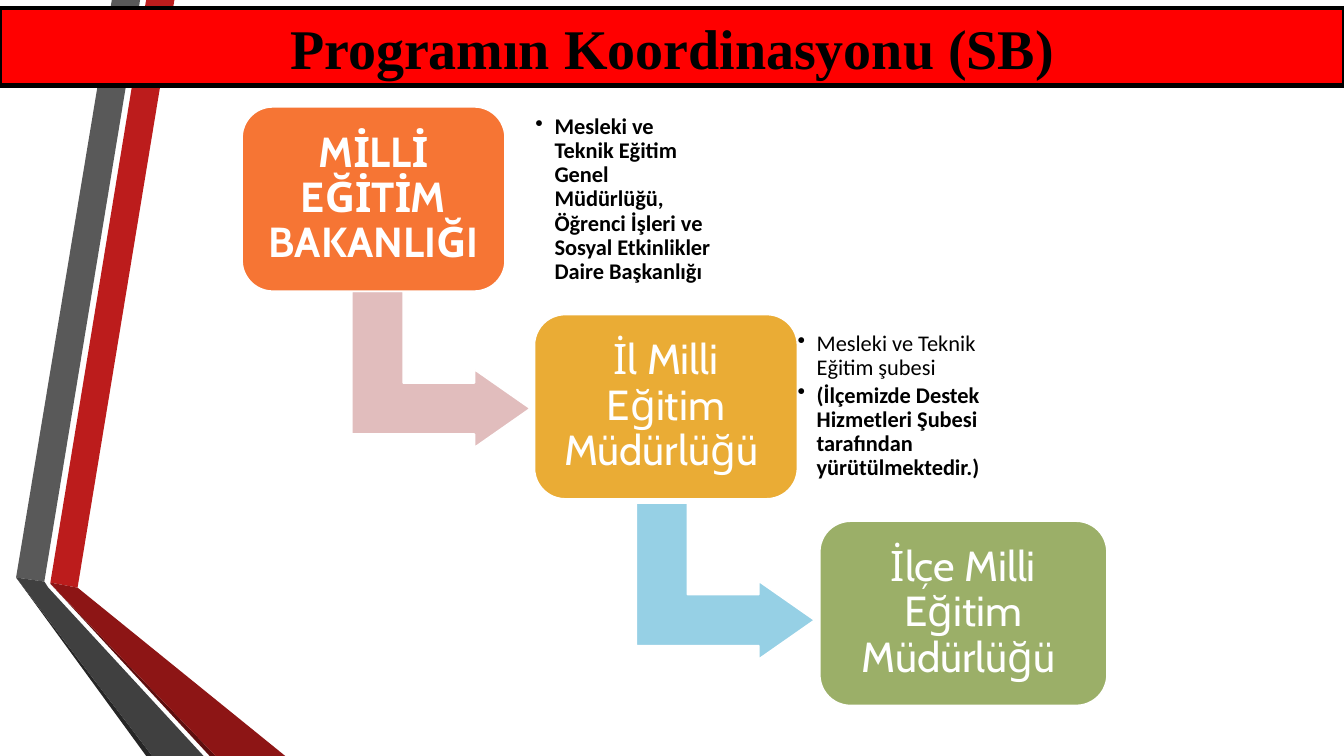
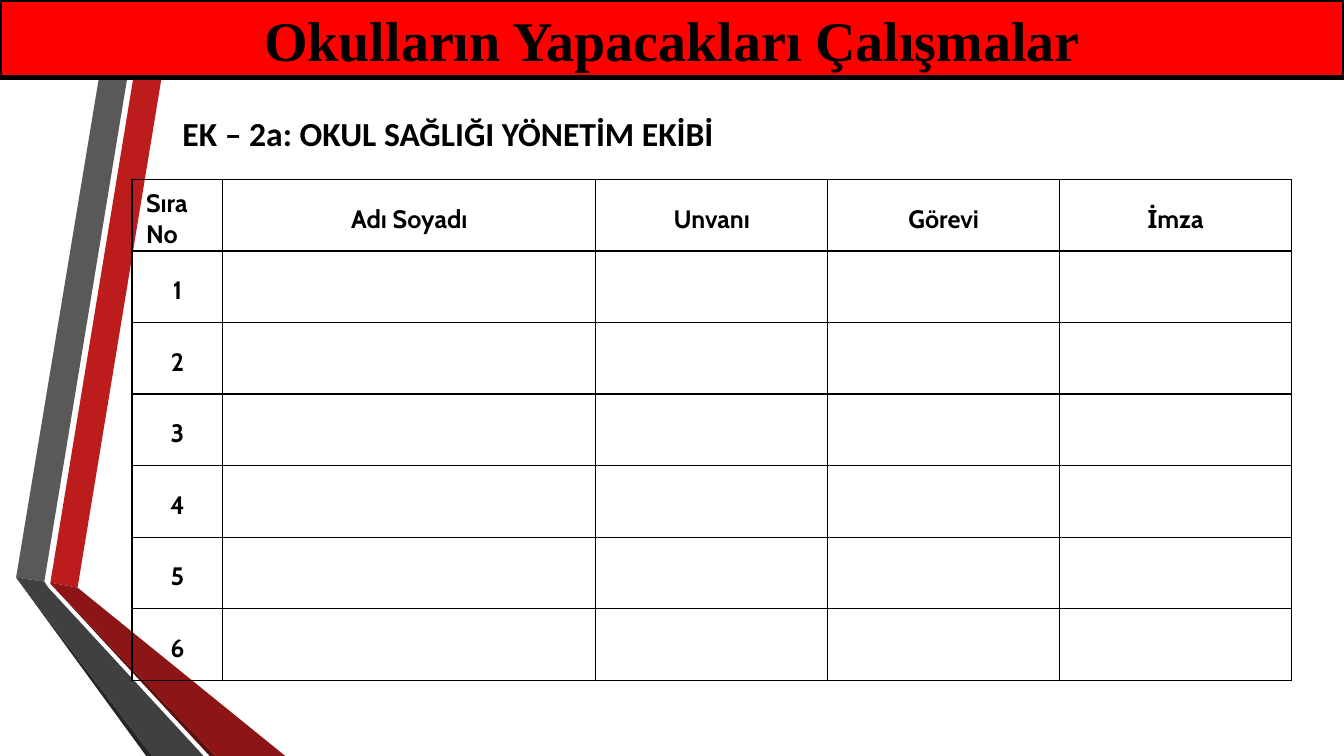
from lxml.etree import SubElement
from pptx import Presentation
from pptx.dml.color import RGBColor
from pptx.enum.shapes import MSO_SHAPE as Shape
from pptx.enum.text import MSO_ANCHOR as Anchor, PP_ALIGN as Align
from pptx.oxml.ns import qn
from pptx.util import Inches, Pt

WIDE, HIGH = 13.33, 7.5
BLACK, WHITE, RED = "000000", "FFFFFF", "FF0000"
SERIF, SANS, ROUND = "Times New Roman", "Calibri", "Cabin"

RIBBON = [
    ("BC1C1C", [(0.5, 5.78), (0.77, 5.83), (1.73, 0), (1.45, 0)]),
    ("595959", [(1.39, 0), (1.11, 0), (0.16, 5.73), (0.44, 5.77)]),
    ("262626", [(0.16, 5.73), (1.45, 7.5), (1.51, 7.5)]),
    ("5E0E0E", [(0.5, 5.79), (2.08, 7.5), (2.14, 7.5)]),
    ("8D1515", [(0.5, 5.79), (2.14, 7.5), (2.83, 7.5), (0.77, 5.83),
                (0.5, 5.78)]),
    ("404040", [(2.02, 7.5), (0.48, 5.83), (0.44, 5.77), (0.16, 5.73),
                (1.51, 7.5)]),
]

# box, fill, bold, label
STEPS = [
    ((2.4, 1.06, 2.61, 1.83), "F67534", True, "MİLLİ EĞİTİM BAKANLIĞI"),
    ((5.3, 3.12, 2.61, 1.83), "EAAC35", False, "İl Milli Eğitim Müdürlüğü "),
    ((8.13, 5.17, 2.85, 1.83), "9BAF68", False, "İlçe Milli Eğitim Müdürlüğü "),
]
ARROWS = [((3.6, 2.78, 1.55, 1.77), "E1BDBD"),
          ((6.42, 4.88, 1.55, 1.77), "96D0E5")]
# box, then (text, bold) for each bullet
NOTES = [
    ((5.24, 1.24, 1.9, 1.48),
     [("Mesleki ve Teknik Eğitim Genel Müdürlüğü, Öğrenci İşleri ve "
       "Sosyal Etkinlikler Daire Başkanlığı", True)]),
    ((7.84, 3.29, 2.16, 1.48),
     [("Mesleki ve Teknik Eğitim şubesi", False),
      ("(İlçemizde Destek Hizmetleri Şubesi tarafından "
       "yürütülmektedir.)", True)]),
]

HEADS = ["Sıra No", "Adı Soyadı", "Unvanı", "Görevi", "İmza"]
COLS = [0.9, 3.7, 2.3, 2.3, 2.3]
ROWS = 6


def color(code):
    return RGBColor.from_string(code)


def inches(box):
    return [Inches(v) for v in box]


def style(para, face, size, code=BLACK, bold=True, align=Align.LEFT):
    para.alignment = align
    for run in para.runs:
        font = run.font
        font.name, font.size, font.bold = face, Pt(size), bold
        font.color.rgb = color(code)


def inset(part, left, top, right, bottom):
    part.margin_left, part.margin_top = Inches(left), Inches(top)
    part.margin_right, part.margin_bottom = Inches(right), Inches(bottom)


def paint(shape, fill, line=None, width=1.25):
    shape.shadow.inherit = False
    shape.fill.solid()
    shape.fill.fore_color.rgb = color(fill)
    if line:
        shape.line.color.rgb = color(line)
        shape.line.width = Pt(width)
    else:
        shape.line.fill.background()


def add_text(slide, box):
    frame = slide.shapes.add_textbox(*inches(box)).text_frame
    frame.word_wrap = True
    frame.vertical_anchor = Anchor.MIDDLE
    return frame


def add_ribbon(slide):
    for fill, points in RIBBON:
        first, *rest = [inches(p) for p in points]
        form = slide.shapes.build_freeform(*first)
        form.add_line_segments(rest, close=True)
        paint(form.convert_to_shape(), fill)


def add_bar(slide, top, text):
    bar = slide.shapes.add_shape(Shape.RECTANGLE,
                                 *inches((0, top, WIDE, 0.77)))
    paint(bar, RED, BLACK, 3)
    frame = bar.text_frame
    frame.word_wrap = True
    frame.vertical_anchor = Anchor.MIDDLE
    frame.text = text
    style(frame.paragraphs[0], SERIF, 40, align=Align.CENTER)


def add_step(slide, box, fill, bold, text):
    step = slide.shapes.add_shape(Shape.ROUNDED_RECTANGLE, *inches(box))
    step.adjustments[0] = 0.167
    paint(step, fill, WHITE)
    frame = step.text_frame
    frame.word_wrap = True
    frame.vertical_anchor = Anchor.MIDDLE
    inset(frame, 0.12, 0.12, 0.12, 0.12)
    frame.text = text
    para = frame.paragraphs[0]
    para.line_spacing = 0.9
    style(para, ROUND, 30, WHITE, bold, Align.CENTER)


def add_arrow(slide, box, fill):
    arrow = slide.shapes.add_shape(Shape.BENT_UP_ARROW, *inches(box))
    for i, value in enumerate((0.328, 0.25, 0.358)):
        arrow.adjustments[i] = value
    arrow.rotation = 90
    paint(arrow, fill, WHITE)


def add_note(slide, box, items):
    frame = add_text(slide, box)
    inset(frame, 0.07, 0.07, 0.07, 0.07)
    frame.text = "\n".join(text for text, _ in items)
    for para, (_, bold) in zip(frame.paragraphs, items):
        para.line_spacing = 0.9
        para.space_after = Pt(2.4)
        style(para, SANS, 16, bold=bold)
        props = para._p.get_or_add_pPr()
        props.set("marL", str(Inches(0.19)))
        props.set("indent", str(-Inches(0.19)))
        SubElement(props, qn("a:buChar"), char="•")


def add_edges(cell):
    props = cell._tc.get_or_add_tcPr()
    for i, side in enumerate(("lnL", "lnR", "lnT", "lnB")):
        edge = props.makeelement(qn("a:" + side), {"w": str(Pt(1))})
        fill = SubElement(edge, qn("a:solidFill"))
        SubElement(fill, qn("a:srgbClr"), val=BLACK)
        props.insert(i, edge)


def add_roster(slide, left, top, high):
    """Place a signing table with headings and numbered empty rows."""
    box = inches((left, top, sum(COLS), high * (ROWS + 1)))
    table = slide.shapes.add_table(ROWS + 1, len(COLS), *box).table
    table.first_row = table.horz_banding = False
    for col, wide in zip(table.columns, COLS):
        col.width = Inches(wide)
    for row in table.rows:
        row.height = Inches(high)
    for cell in table.iter_cells():
        cell.fill.background()
        cell.vertical_anchor = Anchor.MIDDLE
        inset(cell, 0, 0.08, 0, 0)
        add_edges(cell)
    for i, head in enumerate(HEADS):
        table.cell(0, i).text = head
    for i in range(1, ROWS + 1):
        table.cell(i, 0).text = str(i)
    for cell in table.iter_cells():
        style(cell.text_frame.paragraphs[0], ROUND, 18, align=Align.CENTER)
    corner = table.cell(0, 0)
    inset(corner, 0.14, 0.08, 0.2, 0)
    corner.text_frame.paragraphs[0].alignment = Align.LEFT


def new_slide(deck, top, title):
    slide = deck.slides.add_slide(deck.slide_layouts[6])
    add_ribbon(slide)
    add_bar(slide, top, title)
    return slide


def flow_slide(deck):
    slide = new_slide(deck, 0.08, "Programın Koordinasyonu (SB)")
    for arrow in ARROWS:
        add_arrow(slide, *arrow)
    for step in STEPS:
        add_step(slide, *step)
    for note in NOTES:
        add_note(slide, *note)


def team_slide(deck):
    slide = new_slide(deck, 0, "Okulların Yapacakları Çalışmalar")
    frame = add_text(slide, (1.73, 1.07, 10.85, 0.45))
    inset(frame, 0.08, 0.05, 0.1, 0)
    frame.text = "EK – 2a: OKUL SAĞLIĞI YÖNETİM EKİBİ"
    style(frame.paragraphs[0], SANS, 24)
    add_roster(slide, 1.31, 1.78, 0.71)


def main():
    deck = Presentation()
    deck.slide_width, deck.slide_height = Inches(WIDE), Inches(HIGH)
    flow_slide(deck)
    team_slide(deck)
    deck.save("out.pptx")


if __name__ == "__main__":
    main()
